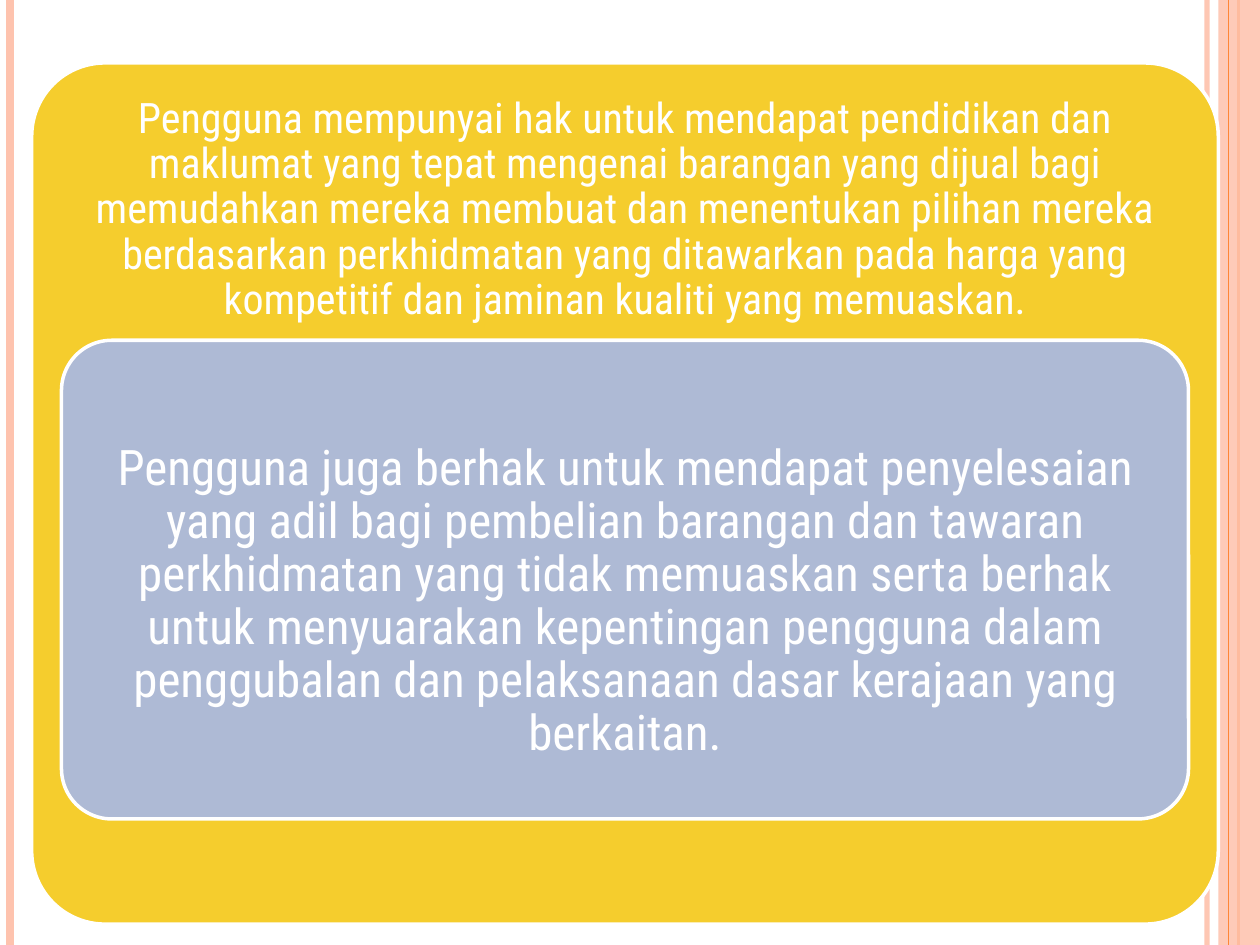
from dataclasses import dataclass

from lxml.etree import SubElement
from pptx import Presentation
from pptx.dml.color import RGBColor
from pptx.enum.shapes import MSO_CONNECTOR, MSO_SHAPE
from pptx.enum.text import MSO_ANCHOR, PP_ALIGN
from pptx.oxml.ns import qn
from pptx.util import Cm, Pt


@dataclass(frozen=True)
class Theme:
    font: str = "Roboto Condensed"
    white: str = "FFFFFF"
    peach: str = "FEC3AE"
    orange: str = "FE8637"
    yellow: str = "F5CD2D"
    blue: str = "AEBAD5"
    outer_size: int = 24
    inner_size: int = 28
    outline: int = 2


THEME = Theme()
WIDTH, HEIGHT = 25.4, 19.05

EDUCATION = (
    "Pengguna mempunyai hak untuk mendapat pendidikan dan maklumat yang tepat "
    "mengenai barangan yang dijual bagi memudahkan mereka membuat dan menentukan "
    "pilihan mereka berdasarkan perkhidmatan yang ditawarkan pada harga yang "
    "kompetitif dan jaminan kualiti yang memuaskan."
)
REDRESS = (
    "Pengguna juga berhak untuk mendapat penyelesaian yang adil bagi pembelian "
    "barangan dan tawaran perkhidmatan yang tidak memuaskan serta berhak untuk "
    "menyuarakan kepentingan pengguna dalam penggubalan dan pelaksanaan dasar "
    "kerajaan yang berkaitan."
)


def apply_format(target, values):
    for name, value in values.items():
        setattr(target, name, value)


def set_opacity(shape, percent):
    for color in shape._element.spPr.iter(qn("a:srgbClr")):
        SubElement(color, qn("a:alpha")).set("val", str(percent * 1000))


def add_rail(page, x, top, height, color, weight, opacity=100):
    rail = page.shapes.add_connector(
        MSO_CONNECTOR.STRAIGHT, Cm(x), Cm(top), Cm(x), Cm(top + height)
    )
    rail.line.color.rgb = RGBColor.from_string(color)
    rail.line.width = Pt(weight)
    if opacity < 100:
        set_opacity(rail, opacity)
    SubElement(rail._element.spPr, qn("a:effectLst"))


def add_side_rails(page, left, top, width, height):
    right = left + width
    add_rail(page, right - 1.07, top, height, THEME.peach, 3, 93)
    add_rail(page, left + 0.2, top, height, THEME.peach, 4.5)
    add_rail(page, right - 0.43, top, height, THEME.orange, 1.5)
    band = page.shapes.add_shape(
        MSO_SHAPE.RECTANGLE, Cm(right - 0.84), Cm(top), Cm(0.84), Cm(height)
    )
    band.shadow.inherit = False
    band.fill.solid()
    band.fill.fore_color.rgb = RGBColor.from_string(THEME.peach)
    band.line.fill.background()
    set_opacity(band, 87)
    add_rail(page, right - 0.64, top, height, THEME.orange, 0.75)


def add_panel(page, box, color, rounding, text, size, side_margin, top_margin):
    panel = page.shapes.add_shape(MSO_SHAPE.ROUNDED_RECTANGLE, *map(Cm, box))
    panel.adjustments[0] = rounding
    panel.shadow.inherit = False
    panel.fill.solid()
    panel.fill.fore_color.rgb = RGBColor.from_string(color)
    panel.line.color.rgb = RGBColor.from_string(THEME.white)
    panel.line.width = Pt(THEME.outline)

    frame = panel.text_frame
    apply_format(frame, {
        "word_wrap": True,
        "vertical_anchor": MSO_ANCHOR.TOP,
        "margin_left": Cm(side_margin),
        "margin_right": Cm(side_margin),
        "margin_top": Cm(top_margin),
        "margin_bottom": 0,
    })
    para = frame.paragraphs[0]
    apply_format(para, {"alignment": PP_ALIGN.CENTER, "line_spacing": 0.9})
    span = para.add_run()
    span.text = text
    apply_format(span.font, {"name": THEME.font, "size": Pt(size)})
    span.font.color.rgb = RGBColor.from_string(THEME.white)


def add_rights_panels(page, left, top, width, height):
    outer = (left, top, width, height)
    inner = (left + 0.6, top + 5.59, width - 1.2, 9.65)
    add_panel(page, outer, THEME.yellow, 0.085, EDUCATION,
              THEME.outer_size, 0.25, 0.25)
    add_panel(page, inner, THEME.blue, 0.105, REDRESS,
              THEME.inner_size, 0.3, 1.78)


def main():
    deck = Presentation()
    apply_format(deck, {"slide_width": Cm(WIDTH), "slide_height": Cm(HEIGHT)})
    page = deck.slides.add_slide(deck.slide_layouts[6])
    add_side_rails(page, 0, 0, WIDTH, HEIGHT)
    add_rights_panels(page, 0.64, 1.27, 23.92, 17.36)
    deck.save("out.pptx")


if __name__ == "__main__":
    main()
